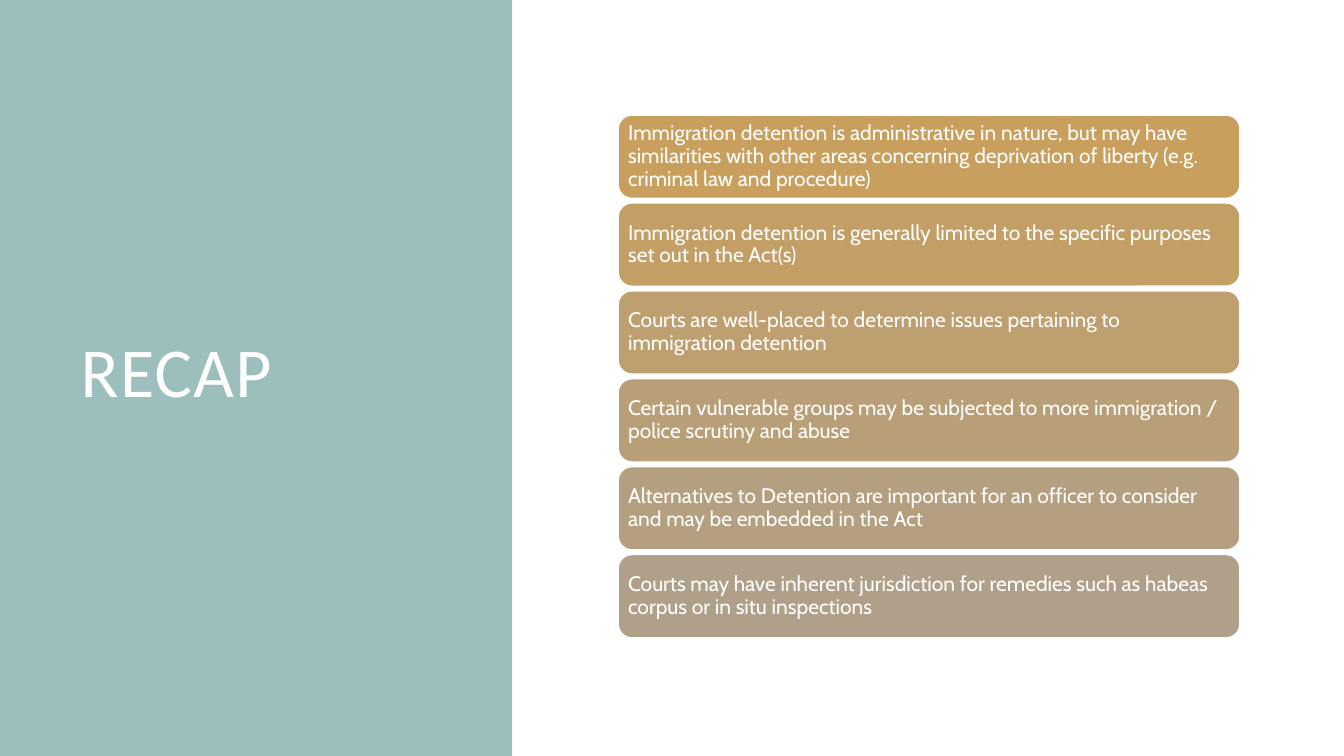
from pptx import Presentation
from pptx.dml.color import RGBColor
from pptx.enum import shapes, text
from pptx.util import Inches, Pt


def paint(fmt, color):
    fmt.solid()
    fmt.fore_color.rgb = RGBColor.from_string(color)


def style(par, face, size, gap):
    """Format a left-aligned white paragraph; gap is its line spacing."""
    par.alignment = text.PP_ALIGN.LEFT
    par.line_spacing = gap
    font = par.runs[0].font
    font.name = face
    font.size = Pt(size)
    paint(font.fill, "FFFFFF")


POINTS = [
    ("C89F5D", "Immigration detention is administrative in nature, but may have "
     "similarities with other areas concerning deprivation of liberty "
     "(e.g. criminal law and procedure)"),
    ("C39F66", "Immigration detention is generally limited to the specific "
     "purposes set out in the Act(s)"),
    ("BE9F6F", "Courts are well-placed to determine issues pertaining to "
     "immigration detention"),
    ("B99F78", "Certain vulnerable groups may be subjected to more "
     "immigration / police scrutiny and abuse"),
    ("B59F81", "Alternatives to Detention are important for an officer to "
     "consider and may be embedded in the Act"),
    ("B1A089", "Courts may have inherent jurisdiction for remedies such as "
     "habeas corpus or in situ inspections"),
]
LEFT, TOP, WIDTH, HEIGHT = 6.13, 1.14, 6.17, 0.83
STEP = 0.872

prs = Presentation()
prs.slide_width = Inches(13.33)
prs.slide_height = Inches(7.5)
slide = prs.slides.add_slide(prs.slide_layouts[5])

# Title on a coloured side panel
title = slide.shapes.title
title.left, title.top = Inches(0.7), Inches(0.7)
title.width, title.height = Inches(3.74), Inches(6.09)
frame = title.text_frame
frame.text = "RECAP"
frame.vertical_anchor = text.MSO_ANCHOR.MIDDLE
style(frame.paragraphs[0], "Calibri", 50, 0.8)
frame.paragraphs[0].runs[0].font.fill  # run properties exist from here on
frame.paragraphs[0].runs[0].font._element.set("spc", "100")

panel = slide.shapes.add_shape(shapes.MSO_SHAPE.RECTANGLE, 0, 0,
                               Inches(5.08), prs.slide_height)
panel.shadow.inherit = False
paint(panel.fill, "9CBEBD")
panel.line.fill.background()
title.element.addprevious(panel.element)  # panel goes behind the title

# Stack of recap points
for row, (color, words) in enumerate(POINTS):
    card = slide.shapes.add_shape(
        shapes.MSO_SHAPE.ROUNDED_RECTANGLE, Inches(LEFT),
        Inches(TOP + row * STEP), Inches(WIDTH), Inches(HEIGHT))
    card.shadow.inherit = False
    paint(card.fill, color)
    paint(card.line.fill, "FFFFFF")
    card.line.width = Pt(1.25)
    frame = card.text_frame
    frame.word_wrap = True
    frame.vertical_anchor = text.MSO_ANCHOR.MIDDLE
    frame.margin_left = frame.margin_right = Inches(0.06)
    frame.margin_top = frame.margin_bottom = Inches(0.06)
    frame.text = words
    style(frame.paragraphs[0], "Cabin", 15, 0.9)
    frame.paragraphs[0].space_after = Pt(5.25)

prs.save("out.pptx")
